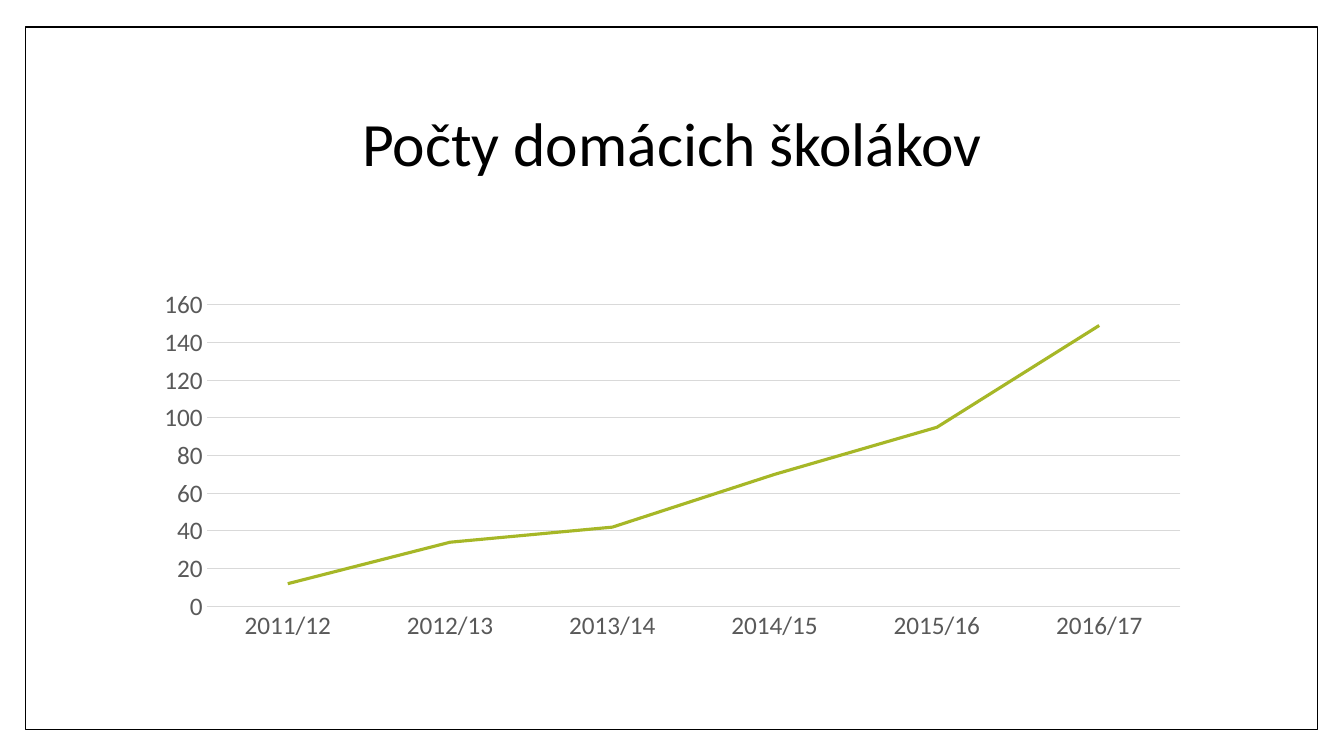
import pptx
import pptx.chart.data
import pptx.dml.color
import pptx.enum.chart
import pptx.enum.shapes
import pptx.enum.text
import pptx.util

Pt = pptx.util.Pt
FONT = "Calibri"
LEFT, WIDTH = 102.24, 756
HOMESCHOOLERS = {
    "2011/12": 12,
    "2012/13": 34,
    "2013/14": 42,
    "2014/15": 70,
    "2015/16": 95,
    "2016/17": 149,
}


def rgb(color):
    return pptx.dml.color.RGBColor.from_string(color)


def style_font(font, size, color):
    font.name = FONT
    font.size = Pt(size)
    font.color.rgb = rgb(color)


def style_line(line, color, width):
    line.color.rgb = rgb(color)
    line.width = Pt(width)


def add_frame(slide, left, top, width, height):
    sp = slide.shapes.add_shape(
        pptx.enum.shapes.MSO_SHAPE.RECTANGLE,
        Pt(left), Pt(top), Pt(width), Pt(height))
    sp.shadow.inherit = False
    sp.fill.solid()
    sp.fill.fore_color.rgb = rgb("FFFFFF")
    style_line(sp.line, "000000", 1)


def add_title(slide, text, left, top, width, height):
    sp = slide.shapes.add_textbox(Pt(left), Pt(top), Pt(width), Pt(height))
    tf = sp.text_frame
    tf.word_wrap = True
    tf.vertical_anchor = pptx.enum.text.MSO_ANCHOR.TOP
    tf.text = text
    p = tf.paragraphs[0]
    p.alignment = pptx.enum.text.PP_ALIGN.CENTER
    p.line_spacing = 0.9
    style_font(p.runs[0].font, 44, "000000")


def style_axis(axis):
    axis.major_tick_mark = pptx.enum.chart.XL_TICK_MARK.NONE
    axis.minor_tick_mark = pptx.enum.chart.XL_TICK_MARK.NONE
    style_font(axis.tick_labels.font, 18, "595959")


def add_line_chart(slide, values, left, top, width, height):
    data = pptx.chart.data.CategoryChartData()
    data.categories = list(values)
    data.add_series("Series 1", list(values.values()))
    chart = slide.shapes.add_chart(
        pptx.enum.chart.XL_CHART_TYPE.LINE,
        Pt(left), Pt(top), Pt(width), Pt(height), data).chart
    chart.has_title = False
    chart.has_legend = False
    style_font(chart.font, 10, "000000")

    plot = chart.plots[0]
    plot.vary_by_categories = False
    series = plot.series[0]
    series.smooth = False
    series.marker.style = pptx.enum.chart.XL_MARKER_STYLE.NONE
    style_line(series.format.line, "A6B727", 2.25)

    style_axis(chart.category_axis)
    style_line(chart.category_axis.format.line, "D9D9D9", 0.75)

    axis = chart.value_axis
    style_axis(axis)
    axis.minimum_scale, axis.maximum_scale, axis.major_unit = 0, 160, 20
    axis.format.line.fill.background()
    style_line(axis.major_gridlines.format.line, "D9D9D9", 0.75)


def main():
    prs = pptx.Presentation()
    prs.slide_width, prs.slide_height = Pt(960), Pt(540)
    slide = prs.slides.add_slide(prs.slide_layouts[6])
    add_frame(slide, 18, 19.44, 923.04, 501.84)
    add_title(slide, "Počty domácich školákov", LEFT, 77.04, WIDTH, 102.96)
    add_line_chart(slide, HOMESCHOOLERS, LEFT, 201.6, WIDTH, 261.36)
    prs.save("out.pptx")


if __name__ == "__main__":
    main()
